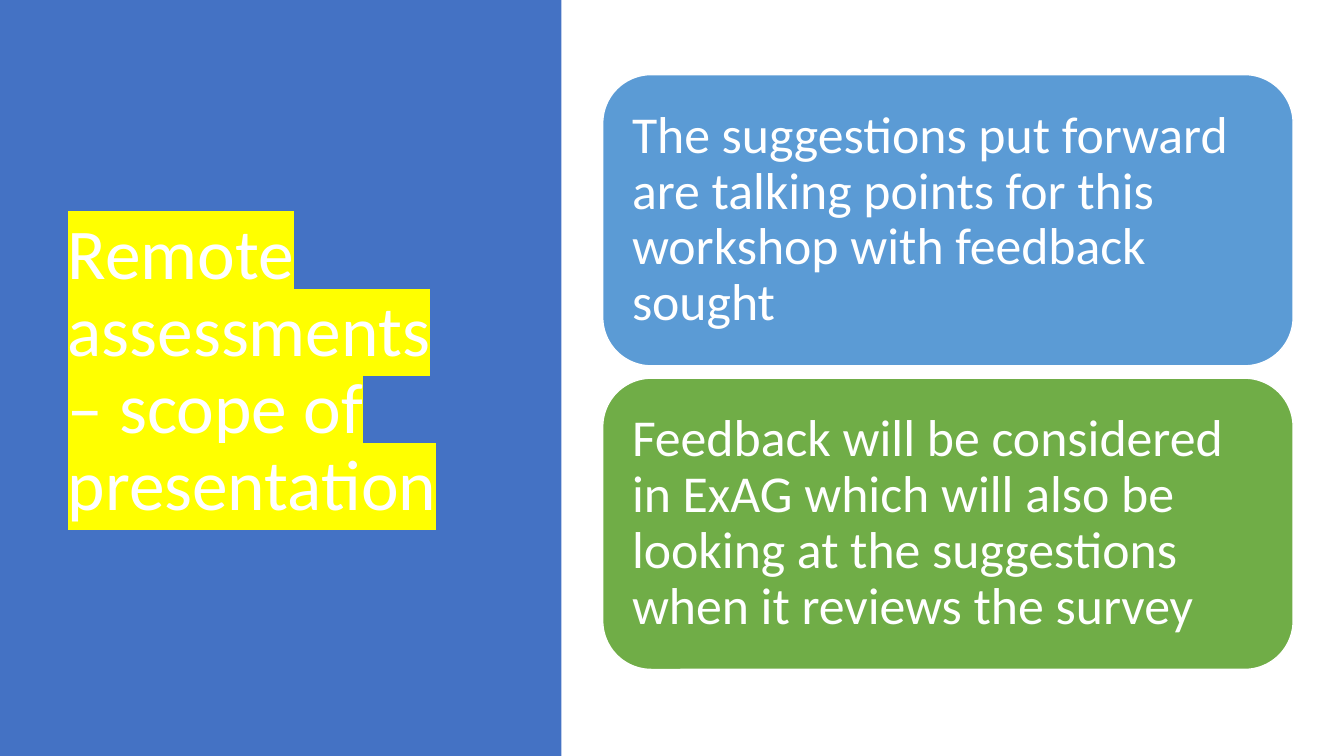
from lxml.etree import SubElement
from pptx import Presentation
from pptx.dml.color import RGBColor
from pptx.enum.shapes import MSO_SHAPE
from pptx.enum.text import MSO_ANCHOR, MSO_AUTO_SIZE, PP_ALIGN
from pptx.oxml.ns import qn
from pptx.util import Cm, Pt

WHITE = "FFFFFF"
SLIDE_WIDTH, SLIDE_HEIGHT = 33.87, 19.05
CARD_TOP, CARD_HEIGHT, CARD_GAP = 1.88, 7.34, 0.31
CARDS = [
    ("The suggestions put forward are talking points for this workshop "
     "with feedback sought", "5B9BD5"),
    ("Feedback will be considered in ExAG which will also be looking at "
     "the suggestions when it reviews the survey", "70AD47"),
]


def rgb(value):
    return RGBColor.from_string(value)


def write_text(shape, text, *, size, color=WHITE, margin=None, highlight=None):
    frame = shape.text_frame
    frame.word_wrap = True
    frame.auto_size = MSO_AUTO_SIZE.NONE
    frame.vertical_anchor = MSO_ANCHOR.MIDDLE
    if margin is not None:
        frame.margin_left = frame.margin_right = Cm(margin)
        frame.margin_top = frame.margin_bottom = Cm(margin)
    paragraph = frame.paragraphs[0]
    paragraph.alignment = PP_ALIGN.LEFT
    paragraph.line_spacing = 0.9
    run = paragraph.add_run()
    run.text = text
    run.font.size = Pt(size)
    run.font.color.rgb = rgb(color)
    if highlight:
        # The schema wants the highlight after the fill and before the font
        mark = SubElement(run.font._element, qn("a:highlight"))
        SubElement(mark, qn("a:srgbClr"), val=highlight)
    run.font.name = "Calibri"


def add_block(slide, preset, left, top, width, height, fill, line=None):
    shape = slide.shapes.add_shape(
        preset, Cm(left), Cm(top), Cm(width), Cm(height))
    shape.shadow.inherit = False
    shape.fill.solid()
    shape.fill.fore_color.rgb = rgb(fill)
    if line:
        shape.line.color.rgb = rgb(line)
        shape.line.width = Pt(1)
    else:
        shape.line.fill.background()
    return shape


def add_title(slide, text):
    title = slide.shapes.title
    title.left, title.top = Cm(1.45), Cm(1.73)
    title.width, title.height = Cm(10.57), Cm(15.29)
    write_text(title, text, size=51, highlight="FFFF00")


def add_side_panel(slide):
    panel = add_block(slide, MSO_SHAPE.RECTANGLE,
                      0, 0, 14.15, SLIDE_HEIGHT, "4472C4")
    # Send the panel behind the title
    slide.shapes.title._element.addprevious(panel._element)


def add_card(slide, top, text, fill):
    card = add_block(slide, MSO_SHAPE.ROUNDED_RECTANGLE,
                     15.19, top, 17.4, CARD_HEIGHT, fill, line=WHITE)
    write_text(card, text, size=37, margin=0.38)


def main():
    presentation = Presentation()
    presentation.slide_width = Cm(SLIDE_WIDTH)
    presentation.slide_height = Cm(SLIDE_HEIGHT)
    title_only = presentation.slide_layouts[5]
    slide = presentation.slides.add_slide(title_only)

    add_title(slide, "Remote assessments – scope of presentation")
    add_side_panel(slide)
    for index, (text, fill) in enumerate(CARDS):
        add_card(slide, CARD_TOP + index * (CARD_HEIGHT + CARD_GAP), text, fill)

    presentation.save("out.pptx")


if __name__ == "__main__":
    main()
